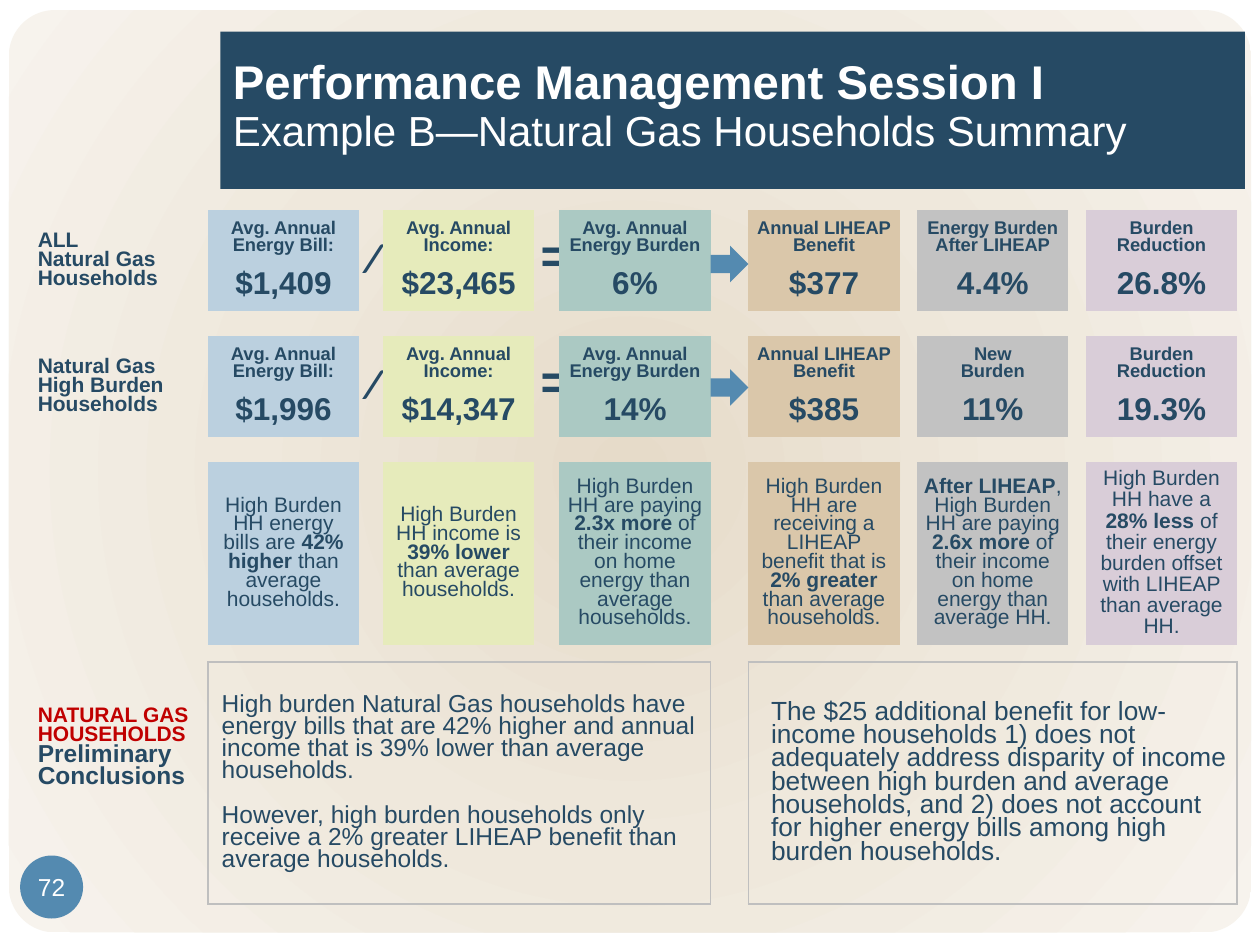
"""Build the energy burden summary slide for natural gas households."""
from pptx import Presentation
from pptx.dml.color import RGBColor
from pptx.enum.shapes import MSO_SHAPE
from pptx.enum.text import MSO_ANCHOR, PP_ALIGN
from pptx.oxml import parse_xml
from pptx.oxml.ns import nsdecls, qn
from pptx.util import Inches, Pt

RECTANGLE, ROUNDED = MSO_SHAPE.RECTANGLE, MSO_SHAPE.ROUNDED_RECTANGLE
OVAL, ARROW = MSO_SHAPE.OVAL, MSO_SHAPE.RIGHT_ARROW
LEFT, CENTER = PP_ALIGN.LEFT, PP_ALIGN.CENTER
TOP, MIDDLE = MSO_ANCHOR.TOP, MSO_ANCHOR.MIDDLE

NAVY = RGBColor(0x26, 0x4A, 0x64)
BLUE = RGBColor(0x54, 0x8A, 0xB0)
WHITE = RGBColor(0xFF, 0xFF, 0xFF)
RED = RGBColor(0xC0, 0x00, 0x00)
GRAY = RGBColor(0xBF, 0xBF, 0xBF)
SAND, CREAM, IVORY = RGBColor(0xE6, 0xDB, 0xC9), RGBColor(0xEF, 0xE8, 0xDC), RGBColor(0xF7, 0xF3, 0xED)
MEASURE_FILLS = [
    RGBColor(0xBB, 0xD0, 0xDF), RGBColor(0xE6, 0xEB, 0xBB), RGBColor(0xAB, 0xC9, 0xC3),
    RGBColor(0xDA, 0xC7, 0xAA), RGBColor(0xC2, 0xC2, 0xC2), RGBColor(0xD9, 0xCD, 0xD8),
]
NO_GRID_STYLE = "{2D5ABB26-0587-4C30-8999-92F81FD0307C}"

COLUMNS = [14, 12, 1.9, 12, 2, 12, 3, 12, 1.3, 12, 1.4, 12]
ROWS = [8, 2, 8, 2, 14.4, 1.4, 19.2]
TABLE_LEFT, TABLE_TOP = 2.5, 16.7
MEASURE_COLUMNS = range(1, 12, 2)
HEADINGS = ["Avg. Annual|Energy Bill:", "Avg. Annual|Income:", "Avg. Annual|Energy Burden",
            "Annual LIHEAP Benefit", "Energy Burden|After LIHEAP", "Burden Reduction"]
GROUPS = {
    0: ("ALL|Natural Gas|Households", HEADINGS,
        ["$1,409", "$23,465", "6%", "$377", "4.4%", "26.8%"]),
    2: ("Natural Gas High Burden Households", HEADINGS[:4] + ["New|Burden"] + HEADINGS[5:],
        ["$1,996", "$14,347", "14%", "$385", "11%", "19.3%"]),
}
FINDINGS = [
    "High Burden HH energy bills are *42% higher* than average households.",
    "High Burden HH income is *39% lower *than average households.",
    "High Burden HH are paying *2.3x more* of their income on home energy than average households.",
    "High Burden HH are receiving a LIHEAP benefit that is *2% greater *than average households.",
    "*After LIHEAP*, High Burden HH are paying *2.6x more* of their income on home energy than average HH.",
    "High Burden HH have a *28% less *of their energy burden offset with LIHEAP than average HH.",
]
CONCLUSIONS = [
    (1, 14, 0.11, ["High burden Natural Gas households have energy bills that are 42% higher and "
                   "annual income that is 39% lower than average households.",
                   "However, high burden households only receive a 2% greater LIHEAP benefit "
                   "than average households."]),
    (7, 15, 0.18, ["The $25 additional benefit for low-income households 1) does not adequately "
                   "address disparity of income between high burden and average households, and "
                   "2) does not account for higher energy bills among high burden households."]),
]


class SlideBuilder:
    """Hold the style and current slide, measured on a grid of 100 columns by 75 rows."""

    font = "Arial"
    unit = Inches(0.1)

    def __init__(self, page):
        self.page = page

    def length(self, steps):
        """Turn grid steps into a length."""
        return round(steps * self.unit)

    def shape(self, kind, place, fill):
        """Add a plain filled shape."""
        box = self.page.shapes.add_shape(kind, *map(self.length, place))
        box.shadow.inherit = False
        self.fill(box, fill)
        box.line.fill.background()
        return box

    def panel(self, place, stops):
        """Add the rounded panel with its radial gradient."""
        box = self.shape(ROUNDED, place, WHITE)
        box.adjustments[0] = 0.05
        marks = "".join(f'<a:gs pos="{position}"><a:srgbClr val="{color}"/></a:gs>'
                        for position, color in stops)
        gradient = parse_xml(
            f'<a:gradFill {nsdecls("a")} rotWithShape="1"><a:gsLst>{marks}</a:gsLst><a:path path="circle">'
            '<a:fillToRect l="50000" t="50000" r="50000" b="50000"/></a:path></a:gradFill>')
        solid = box._element.spPr.find(qn("a:solidFill"))
        solid.getparent().replace(solid, gradient)

    def frame(self, text_frame, margins, wrap=True):
        """Set the insets, wrapping and anchor of a text frame."""
        sides = ["margin_left", "margin_top", "margin_right", "margin_bottom"]
        formats = dict(zip(sides, map(Inches, margins)), word_wrap=wrap, vertical_anchor=MIDDLE)
        for name, value in formats.items():
            setattr(text_frame, name, value)

    def spans(self, para, text, bold=False, size=12, color=NAVY, font=font):
        """Add runs to a paragraph, toggling bold at each asterisk."""
        for index, part in enumerate(text.split("*")):
            if part:
                span = para.add_run()
                span.text = part
                formats = {"name": font, "size": Pt(size), "bold": bold != bool(index % 2)}
                for name, value in formats.items():
                    setattr(span.font, name, value)
                span.font.color.rgb = color

    def paragraph(self, text_frame, text, align=LEFT, spacing=0.8, before=0, **style):
        """Add one paragraph, reusing the first while it is empty."""
        first = text_frame.paragraphs[0]
        para = text_frame.add_paragraph() if first.runs else first
        formats = {"alignment": align, "line_spacing": spacing, "space_before": Pt(before)}
        for name, value in formats.items():
            setattr(para, name, value)
        self.spans(para, text, **style)
        return para

    def table(self, left, top, columns, rows):
        """Add an unstyled table whose empty cells stay small."""
        frame = self.page.shapes.add_table(len(rows), len(columns), *map(
            self.length, (left, top, sum(columns), sum(rows))))
        grid = frame.table
        grid.first_row = grid.horz_banding = False
        grid._tbl.tblPr.find(qn("a:tableStyleId")).text = NO_GRID_STYLE
        for column, width in zip(grid.columns, columns):
            column.width = self.length(width)
        for row, height in zip(grid.rows, rows):
            row.height = self.length(height)
        for cell in grid.iter_cells():
            cell.fill.background()
            cell.vertical_anchor = MIDDLE
            cell.text_frame.paragraphs[0].font.size = Pt(1)
            for side in ("left", "top", "right", "bottom"):
                setattr(cell, f"margin_{side}", Inches(0.05))
        return grid

    def fill(self, target, color):
        """Fill a shape, cell or background with one colour."""
        target.fill.solid()
        target.fill.fore_color.rgb = color

    def border(self, cell, color):
        """Draw a thin border on all sides of a cell."""
        properties = cell._tc.get_or_add_tcPr()
        for index, side in enumerate("LRTB"):
            properties.insert(index, parse_xml(
                f'<a:ln{side} {nsdecls("a")} w="12700"><a:solidFill>'
                f'<a:srgbClr val="{color}"/></a:solidFill></a:ln{side}>'))


def fill_table(builder):
    """Place the measures, findings and conclusions."""
    grid = builder.table(TABLE_LEFT, TABLE_TOP, COLUMNS, ROWS)
    for row, (label, headings, values) in GROUPS.items():
        for line in label.split("|"):
            builder.paragraph(grid.cell(row, 0).text_frame, line, bold=True)
        for column, sign, size, font in ((2, "∕", 24, "Calibri"), (4, "=", 28, "Arial")):
            builder.paragraph(grid.cell(row, column).text_frame, sign, CENTER, bold=True, size=size, font=font)
        for column, heading, value in zip(MEASURE_COLUMNS, headings, values):
            text_frame = grid.cell(row, column).text_frame
            for line in heading.split("|"):
                builder.paragraph(text_frame, line, CENTER, bold=True, size=10.5)
            builder.paragraph(text_frame, value, CENTER, before=10, bold=True, size=18)
    for column, finding, color in zip(MEASURE_COLUMNS, FINDINGS, MEASURE_FILLS):
        spacing = 0.9 if column == MEASURE_COLUMNS[-1] else 0.8
        builder.paragraph(grid.cell(4, column).text_frame, finding, CENTER, spacing)
        for row in (*GROUPS, 4):
            builder.fill(grid.cell(row, column), color)
    label = grid.cell(6, 0)
    label.vertical_anchor, label.margin_top = TOP, Inches(0.36)
    builder.paragraph(label.text_frame, "NATURAL GAS HOUSEHOLDS", bold=True, color=RED)
    builder.paragraph(label.text_frame, "Preliminary Conclusions", bold=True, size=14)
    for column, size, margin, lines in CONCLUSIONS:
        cell = grid.cell(6, column)
        cell.merge(grid.cell(6, column + 4))
        cell.margin_left = Inches(margin)
        for index, line in enumerate(lines):
            builder.paragraph(cell.text_frame, line, before=13 * index, size=size)
        for offset in range(5):
            builder.border(grid.cell(6, column + offset), GRAY)


def main():
    """Build and save the deck."""
    deck = Presentation()
    deck.slide_width, deck.slide_height = Inches(10), Inches(7.5)
    page = deck.slides.add_slide(deck.slide_layouts[6])
    builder = SlideBuilder(page)
    builder.fill(page.background, WHITE)
    builder.panel((0.7, 0.8, 98.6, 73.2), [(0, SAND), (50000, CREAM), (100000, IVORY)])
    badge = builder.shape(OVAL, (1.6, 67.9, 5, 5), BLUE).text_frame
    builder.frame(badge, (0, 0, 0, 0), wrap=False)
    builder.paragraph(badge, "72", CENTER, 1, size=14, color=WHITE)
    title = builder.shape(RECTANGLE, (17.5, 2.5, 81.3, 12.5), NAVY).text_frame
    builder.frame(title, (0.1, 0.05, 0.1, 0.1))
    para = builder.paragraph(title, "Performance Management Session I", spacing=0.9, bold=True, size=27, color=WHITE)
    para.add_line_break()
    builder.spans(para, "Example B—Natural Gas Households Summary", size=24, color=WHITE)
    fill_table(builder)
    for top in (19.5, 29.3):
        builder.shape(ARROW, (56.4, top, 3, 2.9), BLUE)
    deck.save("out.pptx")


if __name__ == "__main__":
    main()
